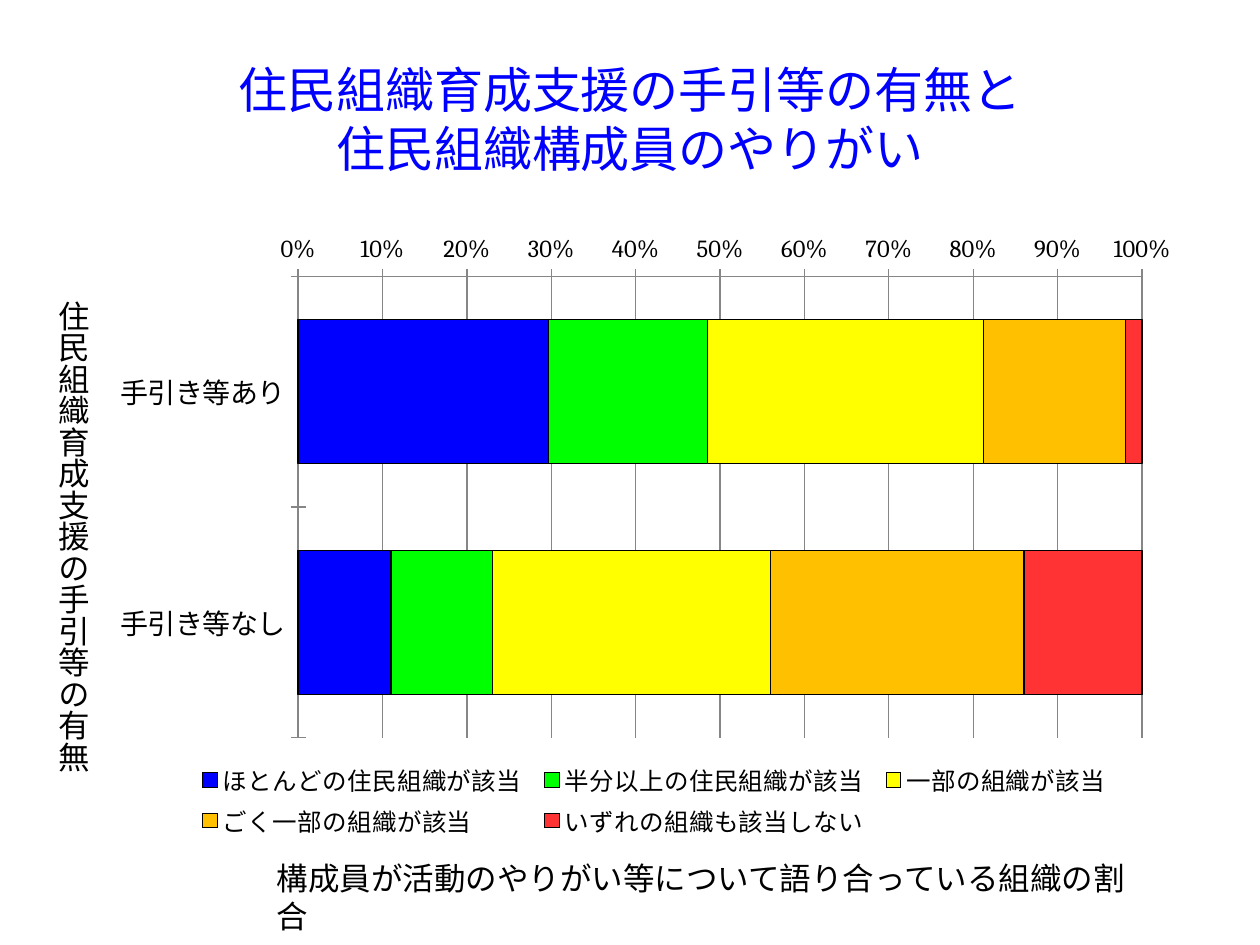
from lxml import etree
from pptx import Presentation
from pptx.chart.data import CategoryChartData
from pptx.dml.color import RGBColor
from pptx.enum.chart import XL_CHART_TYPE, XL_LEGEND_POSITION, XL_TICK_MARK
from pptx.enum.text import MSO_ANCHOR, PP_ALIGN
from pptx.oxml.ns import qn
from pptx.util import Inches, Pt

STACKED_BAR = XL_CHART_TYPE.BAR_STACKED_100
BOTTOM = XL_LEGEND_POSITION.BOTTOM
CROSS = XL_TICK_MARK.CROSS
MIDDLE, TOP = MSO_ANCHOR.MIDDLE, MSO_ANCHOR.TOP
CENTER, LEFT = PP_ALIGN.CENTER, PP_ALIGN.LEFT

WIDTH, HEIGHT = Inches(10), Inches(7.5)
BODY_FONT, SCALE_FONT = "Calibri", "Cambria"
COLORS = {
    "title": "0000FF", "text": "000000", "grid": "868686",
    "most": "0000FF", "half": "00FF00", "some": "FFFF00",
    "few": "FFC000", "none": "FF3333",
}
CATEGORIES = ["手引き等あり", "手引き等なし"]
ANSWERS = [
    ("ほとんどの住民組織が該当", "most", (30, 11)),
    ("半分以上の住民組織が該当", "half", (19, 12)),
    ("一部の組織が該当", "some", (33, 33)),
    ("ごく一部の組織が該当", "few", (17, 30)),
    ("いずれの組織も該当しない", "none", (2, 14)),
]


def rgb(name):
    return RGBColor.from_string(COLORS[name])


def area(left, top, width, height):
    """Turn shares of the slide into a position and size."""
    return (int(WIDTH * left), int(HEIGHT * top),
            int(WIDTH * width), int(HEIGHT * height))


def style_font(font, size, color="text", name=BODY_FONT):
    font.size, font.name, font.bold = Pt(size), name, False
    font.color.rgb = rgb(color)


def add_label(slide, box, text, size, color="text", align=LEFT,
              anchor=TOP, vertical=False):
    frame = slide.shapes.add_textbox(*area(*box)).text_frame
    frame.word_wrap = not vertical
    frame.vertical_anchor = anchor
    if vertical:
        frame._txBody.bodyPr.set("vert", "eaVert")
    paragraph = frame.paragraphs[0]
    paragraph.text = text
    paragraph.alignment = align
    for run in paragraph.runs:
        style_font(run.font, size, color)


def manual_layout(x, y, w, h, inner=False):
    """Fix a chart part's place as shares of the chart."""
    layout = etree.Element(qn("c:layout"))
    manual = etree.SubElement(layout, qn("c:manualLayout"))
    settings = [("layoutTarget", "inner")] if inner else []
    settings += [("xMode", "edge"), ("yMode", "edge"),
                 ("x", x), ("y", y), ("w", w), ("h", h)]
    for tag, value in settings:
        etree.SubElement(manual, qn(f"c:{tag}")).set("val", str(value))
    return layout


def style_axis(axis, size, font_name):
    axis.major_tick_mark = CROSS
    axis.format.line.color.rgb = rgb("grid")
    style_font(axis.tick_labels.font, size, name=font_name)


def add_share_chart(slide, box):
    data = CategoryChartData()
    data.categories = CATEGORIES
    for answer, _, shares in ANSWERS:
        data.add_series(answer, shares)
    chart = slide.shapes.add_chart(STACKED_BAR, *area(*box), data).chart
    chart.has_title = False
    style_font(chart.font, 12)

    # Bars
    plot = chart.plots[0]
    plot.gap_width, plot.overlap, plot.vary_by_categories = 60, 100, False
    for series, (_, color, _) in zip(plot.series, ANSWERS):
        series.format.fill.solid()
        series.format.fill.fore_color.rgb = rgb(color)
        series.format.line.color.rgb = rgb("text")
        series.format.line.width = Pt(0.75)

    # Axes: reversed categories put the scale on top
    style_axis(chart.category_axis, 16, BODY_FONT)
    chart.category_axis.reverse_order = True
    scale = chart.value_axis
    style_axis(scale, 14, SCALE_FONT)
    scale.minimum_scale, scale.maximum_scale, scale.major_unit = 0, 1, 0.1
    scale.tick_labels.number_format = "0%"
    scale.tick_labels.number_format_is_linked = False
    scale.has_major_gridlines = True
    scale.major_gridlines.format.line.color.rgb = rgb("grid")

    # Legend
    chart.has_legend = True
    legend = chart.legend
    legend.position, legend.include_in_layout = BOTTOM, False
    style_font(legend.font, 14)

    # Places of the plot and the legend
    plot_area = chart._chartSpace.chart.plotArea
    for layout in plot_area.findall(qn("c:layout")):
        plot_area.remove(layout)
    plot_area.insert(0, manual_layout(0.18, 0.09, 0.77, 0.74, inner=True))
    for layout in legend._element.findall(qn("c:layout")):
        legend._element.remove(layout)
    legend._element.find(qn("c:legendPos")).addnext(
        manual_layout(0.08, 0.86, 0.85, 0.14))


def main():
    prs = Presentation()
    prs.slide_width, prs.slide_height = WIDTH, HEIGHT
    slide = prs.slides.add_slide(prs.slide_layouts[6])

    # Title
    add_label(slide, (0.05, 0.04, 0.9, 0.17),
              "住民組織育成支援の手引等の有無と\v住民組織構成員のやりがい",
              28, "title", CENTER, MIDDLE)
    # Chart
    add_share_chart(slide, (0.08, 0.233, 0.87, 0.66))
    # Captions of the two axes
    add_label(slide, (0.028, 0.305, 0.05, 0.512),
              "住民組織育成支援の手引等の有無", 18, vertical=True)
    add_label(slide, (0.21, 0.903, 0.703, 0.053),
              "構成員が活動のやりがい等について語り合っている組織の割合", 18)

    prs.save("out.pptx")


if __name__ == "__main__":
    main()
